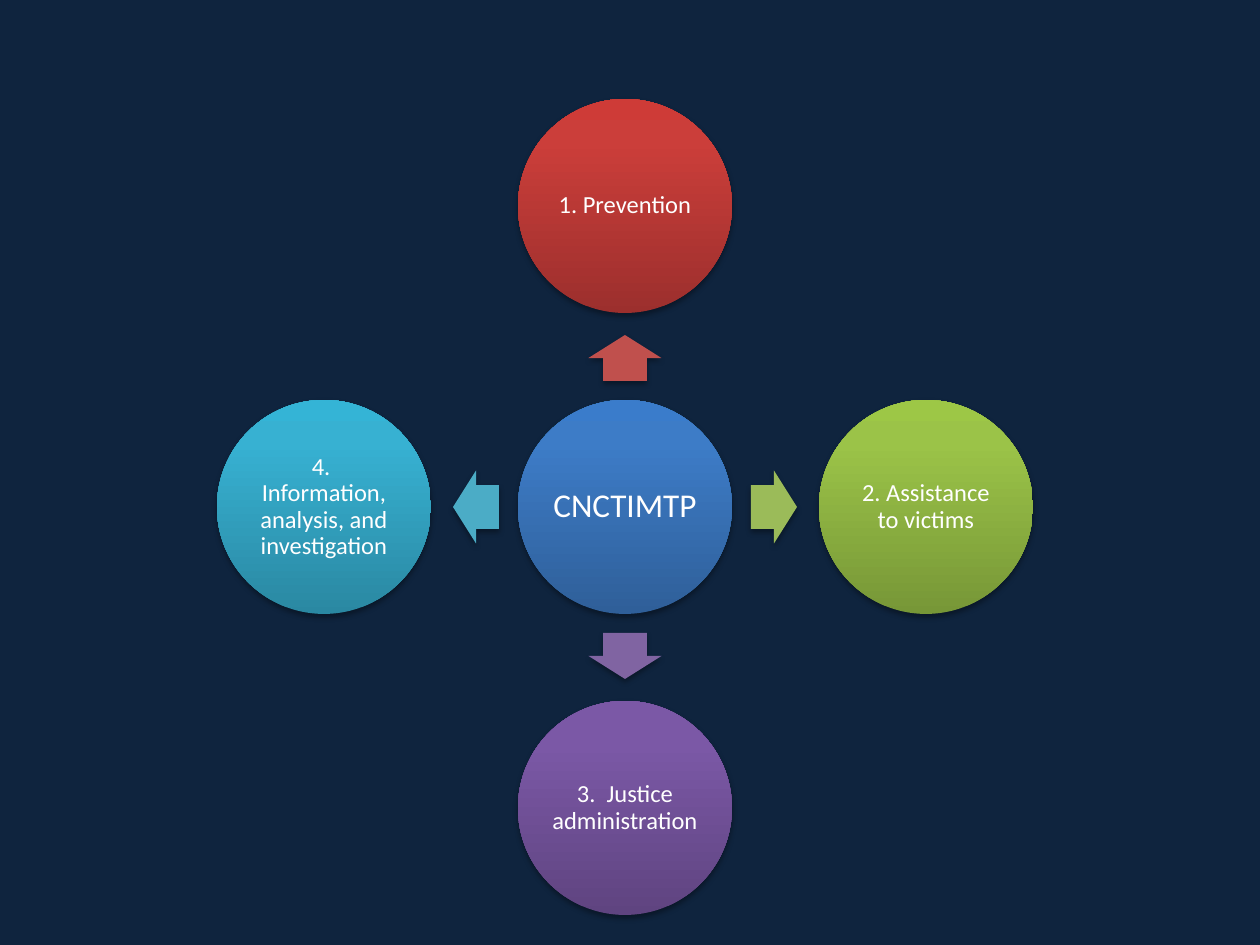
from copy import deepcopy
from lxml.etree import SubElement
from pptx import Presentation
from pptx.dml.color import RGBColor
from pptx.enum.shapes import MSO_SHAPE
from pptx.enum.text import MSO_ANCHOR, PP_ALIGN
from pptx.oxml.ns import qn
from pptx.util import Emu, Pt

DISC, STEP, REACH = 214, 301, 149
HUB = ("CNCTIMTP", ("2F5F99", "3D7CC7", "3A7CCB"))
SPOKES = [
    ("1. Prevention", (0, -1), 270, "C0504D", ("9C2F2D", "CB3E3A", "CE3B37")),
    ("2. Assistance to victims", (1, 0), 0, "9BBB59", ("779737", "9BC348", "9DC746")),
    ("3.  Justice administration", (0, 1), 90, "8064A2", ("5F4480", "7B58A6", "7C57A8")),
    ("4.  Information, analysis, and investigation", (-1, 0), 180, "4BACC6",
     ("2A88A2", "37B1D2", "34B4D6")),
]


def px(count):
    """Turn px into EMU."""
    return Emu(round(count * 914400 / 126))


def paint(color, code):
    """Set a colour from a hex string."""
    color.rgb = RGBColor.from_string(code)


def shade(shape):
    """Give a shape a soft shadow below it."""
    shape.shadow.inherit = False
    effects = shape.element.spPr.find(qn("a:effectLst"))
    outer = SubElement(effects, qn("a:outerShdw"), blurRad=str(Pt(3.1)),
                       dist=str(Pt(1.8)), dir="5400000", rotWithShape="0")
    black = SubElement(outer, qn("a:srgbClr"), val="000000")
    SubElement(black, qn("a:alpha"), val="35000")


def blend(fill, codes):
    """Fill with a three-stop gradient that runs from bottom to top."""
    fill.gradient()
    fill.gradient_angle = 90
    stops = fill._xPr.find(qn("a:gradFill")).find(qn("a:gsLst"))
    stops.append(deepcopy(stops[-1]))
    for stop, place, code in zip(fill.gradient_stops, (0, 0.8, 1), codes):
        stop.position = place
        paint(stop.color, code)


def add_part(slide, kind, mid, size):
    """Add a shape without outline, centred on a point."""
    (x, y), (wide, high) = mid, size
    shape = slide.shapes.add_shape(
        kind, px(x - wide / 2), px(y - high / 2), px(wide), px(high))
    shape.line.fill.background()
    shade(shape)
    return shape


def add_disc(slide, mid, text, codes, size, inset):
    """Add a labelled gradient circle."""
    disc = add_part(slide, MSO_SHAPE.OVAL, mid, (DISC, DISC))
    blend(disc.fill, codes)
    frame = disc.text_frame
    frame.word_wrap = True
    frame.vertical_anchor = MSO_ANCHOR.MIDDLE
    frame.margin_left = frame.margin_right = px(inset)
    frame.margin_top = frame.margin_bottom = px(inset)
    para = frame.paragraphs[0]
    para.alignment = PP_ALIGN.CENTER
    para.line_spacing = 0.9
    run = para.add_run()
    run.text = text
    run.font.name = "Calibri"
    run.font.size = Pt(size)
    paint(run.font.color, "FFFFFF")


def add_arrow(slide, mid, turn, code):
    """Add a block arrow that points away from the hub."""
    arrow = add_part(slide, MSO_SHAPE.RIGHT_ARROW, mid, (46, 73))
    arrow.adjustments[0] = 0.6
    arrow.adjustments[1] = 0.5
    arrow.rotation = turn
    arrow.fill.solid()
    paint(arrow.fill.fore_color, code)


def add_wheel(slide, box):
    """Lay out the hub and its four spokes in a box."""
    left, top, wide, high = box
    x, y = left + wide / 2, top + high / 2
    add_disc(slide, (x, y), *HUB, 19, 4)
    for text, (across, down), turn, code, codes in SPOKES:
        add_arrow(slide, (x + across * REACH, y + down * REACH), turn, code)
        add_disc(slide, (x + across * STEP, y + down * STEP), text, codes, 14, 3)


def main():
    """Build and save the slide."""
    deck = Presentation()
    deck.slide_width, deck.slide_height = px(1260), px(945)
    slide = deck.slides.add_slide(deck.slide_layouts[6])
    slide.background.fill.solid()
    paint(slide.background.fill.fore_color, "0F243E")
    add_wheel(slide, (217, 99, 816, 816))
    deck.save("out.pptx")


if __name__ == "__main__":
    main()
